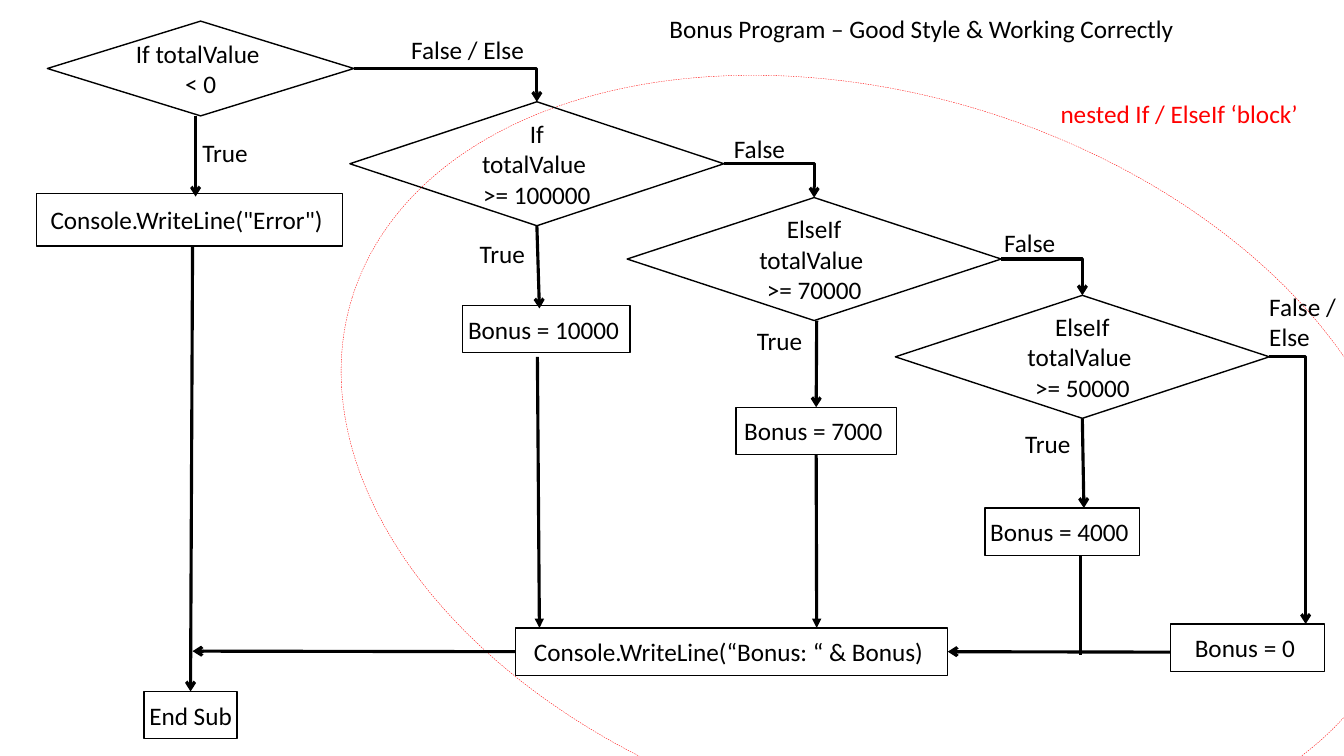
from dataclasses import dataclass
from typing import NamedTuple, Union

from lxml import etree
from pptx import Presentation
from pptx.dml.color import RGBColor
from pptx.enum.dml import MSO_LINE
from pptx.enum.shapes import MSO_CONNECTOR, MSO_SHAPE
from pptx.enum.text import MSO_ANCHOR, MSO_AUTO_SIZE, PP_ALIGN
from pptx.oxml.ns import qn
from pptx.util import Inches, Pt

DIAMOND = MSO_SHAPE.FLOWCHART_DECISION
RECTANGLE = MSO_SHAPE.RECTANGLE
ELLIPSE = MSO_SHAPE.OVAL
STRAIGHT = MSO_CONNECTOR.STRAIGHT
ELBOW = MSO_CONNECTOR.ELBOW
LEFT, CENTER = PP_ALIGN.LEFT, PP_ALIGN.CENTER
TOP, MIDDLE = MSO_ANCHOR.TOP, MSO_ANCHOR.MIDDLE
TOP_SIDE, LEFT_SIDE, BOTTOM_SIDE, RIGHT_SIDE = range(4)

FONT = "Calibri"
BLACK, RED = "000000", "FF0000"
TITLE_ONLY_LAYOUT = 5


@dataclass(frozen=True)
class Node:
    name: str
    kind: int
    left: float
    top: float
    width: float
    height: float
    text: str


@dataclass(frozen=True)
class Label:
    text: str
    left: float
    top: float
    width: float
    height: float = 0.4
    color: str = BLACK


class Point(NamedTuple):
    x: float
    y: float


class Joint(NamedTuple):
    node: str
    side: int


End = Union[Point, Joint]


@dataclass(frozen=True)
class Arrow:
    start: End
    end: End
    head: str = "arrow"
    kind: int = STRAIGHT


NODES = [
    # Decisions
    Node("negative", DIAMOND, 0.47, 0.21, 3.04, 0.94, "If totalValue \n< 0"),
    Node("100000", DIAMOND, 3.47, 1.01, 3.71, 1.23, "If\ntotalValue \n>= 100000"),
    Node("70000", DIAMOND, 6.22, 1.96, 3.71, 1.22, "ElseIf\ntotalValue \n>= 70000"),
    Node("50000", DIAMOND, 8.88, 2.93, 3.71, 1.22, "ElseIf\ntotalValue \n>= 50000"),
    # Actions
    Node("error", RECTANGLE, 0.36, 1.92, 3.04, 0.52, 'Console.WriteLine("Error") '),
    Node("bonus 10000", RECTANGLE, 4.59, 3.03, 1.66, 0.47, "Bonus = 10000 "),
    Node("bonus 7000", RECTANGLE, 7.3, 4.04, 1.59, 0.47, "Bonus = 7000 "),
    Node("bonus 4000", RECTANGLE, 9.77, 5.04, 1.53, 0.47, "Bonus = 4000 "),
    Node("bonus 0", RECTANGLE, 11.61, 6.19, 1.53, 0.47, "Bonus = 0 "),
    Node("output", RECTANGLE, 5.11, 6.23, 4.29, 0.47,
         "Console.WriteLine(“Bonus: “ & Bonus) "),
    Node("end", RECTANGLE, 1.43, 6.86, 0.92, 0.47, "End Sub"),
]

TITLE = Label("Bonus Program – Good Style & Working Correctly", 6.54, 0.08, 5.26)
LABELS = [
    Label("True", 1.91, 1.31, 0.66),
    Label("True", 4.66, 2.32, 0.66),
    Label("True", 7.41, 3.18, 0.66),
    Label("True", 10.07, 4.2, 0.66),
    Label("False / Else", 3.98, 0.29, 1.33),
    Label("False", 7.18, 1.27, 0.71),
    Label("False", 9.86, 2.21, 0.71),
    Label("False /\nElse", 12.49, 2.84, 0.93, 0.71),
    Label("nested If / ElseIf ‘block’", 10.42, 0.93, 2.58, color=RED),
]

ARROWS = [
    # False branches
    Arrow(Joint("negative", RIGHT_SIDE), Joint("100000", TOP_SIDE), kind=ELBOW),
    Arrow(Joint("100000", RIGHT_SIDE), Joint("70000", TOP_SIDE), kind=ELBOW),
    Arrow(Joint("70000", RIGHT_SIDE), Joint("50000", TOP_SIDE), kind=ELBOW),
    Arrow(Joint("50000", RIGHT_SIDE), Point(12.95, 6.19), kind=ELBOW),
    # True branches
    Arrow(Point(1.94, 1.15), Point(1.94, 1.95)),
    Arrow(Joint("100000", BOTTOM_SIDE), Point(5.35, 3.06)),
    Arrow(Point(8.1, 3.18), Joint("bonus 7000", TOP_SIDE)),
    Arrow(Joint("50000", BOTTOM_SIDE), Point(10.75, 5.04)),
    # Ways to the output and the end
    Arrow(Point(5.33, 3.54), Point(5.35, 6.23), "triangle"),
    Arrow(Joint("bonus 7000", BOTTOM_SIDE), Point(8.1, 6.23), "triangle"),
    Arrow(Point(10.72, 5.51), Point(10.72, 6.5), "none"),
    Arrow(Point(11.61, 6.47), Joint("output", RIGHT_SIDE)),
    Arrow(Joint("output", LEFT_SIDE), Point(1.91, 6.46)),
    Arrow(Point(1.91, 2.45), Joint("end", TOP_SIDE)),
]


def rgb(color: str) -> RGBColor:
    return RGBColor.from_string(color)


def write_text(shape, text: str, color: str, align, anchor) -> None:
    frame = shape.text_frame
    frame.text = text
    frame.vertical_anchor = anchor
    for paragraph in frame.paragraphs:
        paragraph.alignment = align
        paragraph.line_spacing = 1.0
        for run in paragraph.runs:
            run.font.name = FONT
            run.font.size = Pt(18)
            run.font.color.rgb = rgb(color)


def add_outline(slide, kind, left: float, top: float, width: float, height: float,
                color: str, weight: float):
    shape = slide.shapes.add_shape(
        kind, Inches(left), Inches(top), Inches(width), Inches(height))
    shape.shadow.inherit = False
    shape.fill.background()
    shape.line.color.rgb = rgb(color)
    shape.line.width = Pt(weight)
    return shape


def add_node(slide, node: Node):
    shape = add_outline(slide, node.kind, node.left, node.top, node.width,
                        node.height, BLACK, 1)
    write_text(shape, node.text, BLACK, CENTER, MIDDLE)
    frame = shape.text_frame
    frame.margin_left = frame.margin_right = Inches(0.04)
    frame.margin_top = frame.margin_bottom = Inches(0.04)
    return shape


def format_label(shape, label: Label) -> None:
    shape.left, shape.top = Inches(label.left), Inches(label.top)
    shape.width, shape.height = Inches(label.width), Inches(label.height)
    write_text(shape, label.text, label.color, LEFT, TOP)
    shape.text_frame.word_wrap = False
    shape.text_frame.auto_size = MSO_AUTO_SIZE.SHAPE_TO_FIT_TEXT


def add_label(slide, label: Label) -> None:
    format_label(slide.shapes.add_textbox(0, 0, 0, 0), label)


def add_arrow(slide, arrow: Arrow, shapes: dict) -> None:
    connector = slide.shapes.add_connector(arrow.kind, 0, 0, 0, 0)
    if isinstance(arrow.start, Joint):
        connector.begin_connect(shapes[arrow.start.node], arrow.start.side)
    else:
        connector.begin_x, connector.begin_y = map(Inches, arrow.start)
    if isinstance(arrow.end, Joint):
        connector.end_connect(shapes[arrow.end.node], arrow.end.side)
    else:
        connector.end_x, connector.end_y = map(Inches, arrow.end)
    connector.line.color.rgb = rgb(BLACK)
    connector.line.width = Pt(2.25)

    properties = connector.element.spPr
    if arrow.kind == ELBOW:
        properties.find(qn("a:prstGeom")).set("prst", "bentConnector2")
    line = properties.find(qn("a:ln"))
    etree.SubElement(line, qn("a:tailEnd"), type=arrow.head)
    etree.SubElement(properties, qn("a:effectLst"))


def main() -> None:
    presentation = Presentation()
    presentation.slide_width, presentation.slide_height = Inches(13.33), Inches(7.5)
    slide = presentation.slides.add_slide(presentation.slide_layouts[TITLE_ONLY_LAYOUT])
    format_label(slide.shapes.title, TITLE)

    # Outline around the nested block
    block = add_outline(slide, ELLIPSE, 3.25, 0.94, 10.87, 7.24, RED, 0.25)
    block.rotation = 17.2
    block.line.dash_style = MSO_LINE.DASH

    # Flowchart
    shapes = {node.name: add_node(slide, node) for node in NODES}
    for arrow in ARROWS:
        add_arrow(slide, arrow, shapes)
    for label in LABELS:
        add_label(slide, label)

    presentation.save("out.pptx")


if __name__ == "__main__":
    main()
